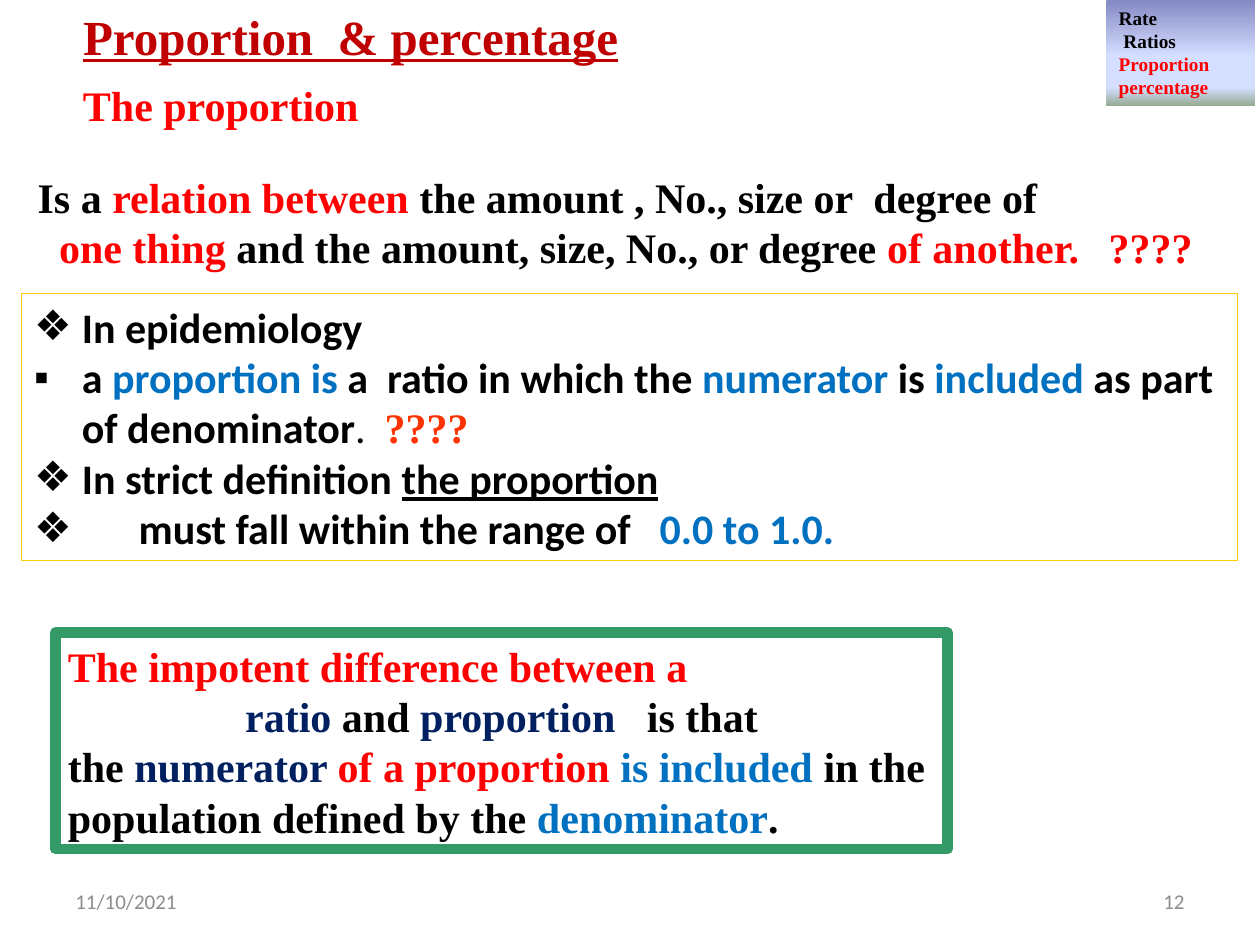
from lxml import etree
from pptx import Presentation
from pptx.dml import color
from pptx.enum import shapes, text
from pptx.oxml import ns
from pptx.util import Inches, Pt

HUES = {
    "black": "000000", "red": "FF0000", "dark": "C00000", "blue": "0070C0",
    "navy": "002060", "coral": "FF3300", "gray": "8C8C8C",
    "gold": "FFCC00", "green": "339966",
}
FADE = [(0, "8488C4"), (53, "D4DEFF"), (83, "D4DEFF"), (100, "96AB94")]
ROMAN, SANS = "Times New Roman", "Calibri"
LEFT, MID, RIGHT = text.PP_ALIGN.LEFT, text.PP_ALIGN.CENTER, text.PP_ALIGN.RIGHT


def hue(name):
    return color.RGBColor.from_string(HUES[name])


def place(shape, left, top, width, height):
    shape.left, shape.top = Inches(left), Inches(top)
    shape.width, shape.height = Inches(width), Inches(height)


def node(parent, tag, **attrs):
    item = etree.SubElement(parent, ns.qn(tag))
    for key, value in attrs.items():
        item.set(key, str(value))
    return item


def setup(shape, anchor="top", wrap=True):
    frame = shape.text_frame
    frame.auto_size = text.MSO_AUTO_SIZE.NONE
    frame.word_wrap = wrap
    frame.vertical_anchor = getattr(text.MSO_ANCHOR, anchor.upper())


def style(run, size, face, tint="black", bold=True, under=False):
    font = run.font
    font.size, font.name, font.bold = Pt(size), face, bold
    font.underline = under
    font.color.rgb = hue(tint)


def write(shape, lines, size=24, face=ROMAN, align=LEFT):
    frame = shape.text_frame
    for i, line in enumerate(lines):
        para = frame.paragraphs[0] if i == 0 else frame.add_paragraph()
        para.alignment = align
        para.space_before = Pt(0)
        for words, *look in line:
            run = para.add_run()
            run.text = words
            opts = {"face": face}
            if look:
                opts["tint"] = look[0]
            if len(look) > 1:
                opts.update(look[1])
            style(run, size, **opts)
    return frame.paragraphs


def label(slide, at, lines, size=24, face=ROMAN, align=LEFT, anchor="top", wrap=True):
    box = slide.shapes.add_textbox(*map(Inches, at))
    setup(box, anchor, wrap)
    return write(box, lines, size, face, align)


def panel(slide, at, anchor="top"):
    box = slide.shapes.add_shape(shapes.MSO_SHAPE.RECTANGLE, *map(Inches, at))
    box.shadow.inherit = False
    box.fill.background()
    box.line.fill.background()
    setup(box, anchor)
    return box


def edge(shape, tint, width):
    shape.line.color.rgb = hue(tint)
    shape.line.width = Pt(width)


def fade(shape):
    shape.fill.gradient()
    shape.fill.gradient_angle = 270
    stops = shape.element.spPr.find(".//" + ns.qn("a:gsLst"))
    for stop in list(stops):
        stops.remove(stop)
    for spot, tone in FADE:
        stop = node(stops, "a:gs", pos=spot * 1000)
        node(stop, "a:srgbClr", val=tone)


def bullet(para, mark, left=0.38):
    props = para._p.get_or_add_pPr()
    props.set("marL", str(Inches(left)))
    props.set("indent", str(-Inches(left)))
    node(props, "a:buChar", char=mark)


def heads(slide):
    title = slide.shapes.title
    place(title, 0.56, 0, 5.19, 0.57)
    setup(title, wrap=False)
    write(title, [[("Proportion  & percentage", "dark", {"under": True})]], 28)
    label(slide, (0.56, 0.58, 2.79, 0.5), [[("The proportion", "red")]], wrap=False)


def menu(slide):
    box = panel(slide, (8.78, 0, 1.18, 0.84))
    fade(box)
    write(box, [[("Rate",)], [(" Ratios",)],
                [("Proportion", "red")], [("percentage", "red")]], 11)


def intro(slide):
    paras = label(slide, (0.2, 1.31, 9.91, 0.91), [
        [("Is a",), (" relation between ", "red"),
         ("the amount , No., size or  degree of",)],
        [("one thing ", "red"), ("and the amount, size, No., or degree ",),
         ("of another.\t????", "red")],
    ])
    props = paras[1]._p.get_or_add_pPr()
    props.set("indent", str(Inches(0.17)))
    node(node(props, "a:tabLst"), "a:tab", pos=Inches(8.68), algn="l")


def points(slide):
    body = slide.placeholders[1]
    place(body, 0.17, 2.33, 9.65, 2.12)
    edge(body, "gold", 0.75)
    setup(body, "middle")
    paras = write(body, [
        [("In epidemiology",)],
        [("a ",), ("proportion is ", "blue"), ("a  ratio in which the ",),
         ("numerator", "blue"), (" is ",), ("included ", "blue"),
         ("as part of denominator",), (".  ", "black", {"bold": False}),
         ("????", "coral", {"face": ROMAN})],
        [("In strict definition ",), ("the proportion", "black", {"under": True})],
        [("must fall within the range of   ",), ("0.0 to 1.0.", "blue")],
    ], face=SANS)
    for para, mark, left in zip(paras, "❖▪❖❖", (0.38, 0.38, 0.38, 0.83)):
        bullet(para, mark, left)


def note(slide):
    box = panel(slide, (0.44, 5.02, 7.08, 1.72), "middle")
    edge(box, "green", 6)
    paras = write(box, [
        [("The impotent difference between a", "red")],
        [(" ",), ("ratio ", "navy"), ("and ",), ("proportion", "navy"),
         ("   is that ",)],
        [("the ",), ("numerator ", "navy"), ("of a proportion ", "red"),
         ("is included ", "blue"), ("in the population defined by the ",),
         ("denominator", "blue"), (".",)],
    ])
    paras[1].alignment = MID


def foot(slide):
    for left, words, align in ((0.5, "11/10/2021", LEFT), (7.17, "12", RIGHT)):
        label(slide, (left, 6.95, 2.33, 0.4), [[(words, "gray", {"bold": False})]],
              12, SANS, align, "middle")


def main():
    deck = Presentation()
    deck.slide_width, deck.slide_height = Inches(10), Inches(7.5)
    slide = deck.slides.add_slide(deck.slide_layouts[1])
    for draw in (heads, menu, intro, points, note, foot):
        draw(slide)
    deck.save("out.pptx")


if __name__ == "__main__":
    main()
